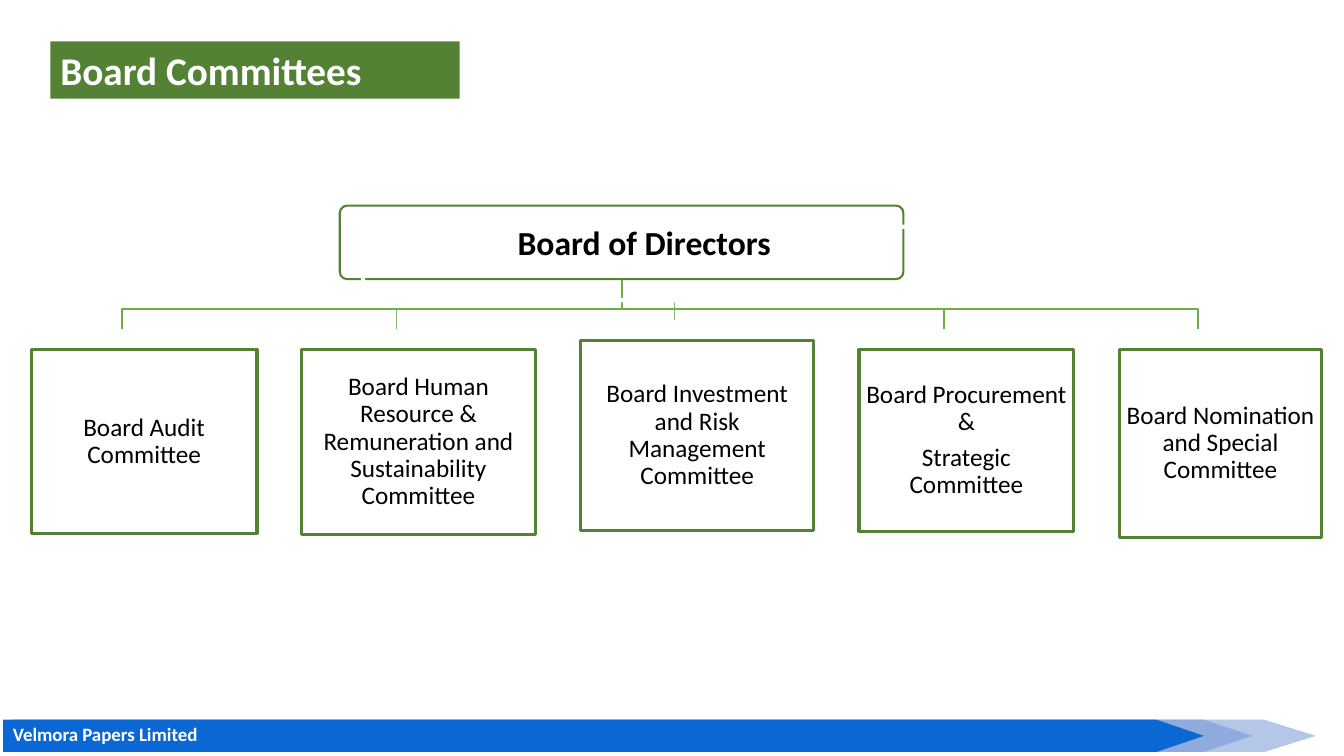
"""Build the board committees organisation chart slide."""
from dataclasses import dataclass

from pptx import Presentation
from pptx.dml.color import RGBColor
from pptx.enum.shapes import MSO_SHAPE
from pptx.enum.text import MSO_ANCHOR, MSO_AUTO_SIZE, PP_ALIGN
from pptx.util import Pt

EMU_PER_PX = 9144
TITLE_ONLY = 5
RECTANGLE = MSO_SHAPE.RECTANGLE
ROUNDED = MSO_SHAPE.ROUNDED_RECTANGLE
TOP, MIDDLE = MSO_ANCHOR.TOP, MSO_ANCHOR.MIDDLE
LEFT, CENTER = PP_ALIGN.LEFT, PP_ALIGN.CENTER
NO_AUTOFIT = MSO_AUTO_SIZE.NONE


@dataclass(frozen=True)
class Theme:
    font: str = "Calibri"
    white: str = "FFFFFF"
    black: str = "000000"
    green: str = "548235"
    branch: str = "70AD47"
    pale_branch: str = "88B76F"
    blue: str = "0A67D4"
    mid_blue: str = "8FAADC"
    pale_blue: str = "B4C7E7"
    title_size: float = 28
    board_size: float = 24
    committee_size: float = 18
    footer_size: float = 13.5


def px(length):
    return round(length * EMU_PER_PX)


class SlideBuilder:
    def __init__(self, slide, theme):
        self.slide = slide
        self.theme = theme

    def paint(self, shape, fill=None, line=None, width=1):
        shape.shadow.inherit = False
        if fill:
            shape.fill.solid()
            shape.fill.fore_color.rgb = RGBColor.from_string(fill)
        else:
            shape.fill.background()
        if line:
            shape.line.color.rgb = RGBColor.from_string(line)
            shape.line.width = Pt(width)
        else:
            shape.line.fill.background()

    def set_text(self, shape, lines, size, color, bold=False, align=CENTER,
                 anchor=MIDDLE, inset=(10, 5), spacing=0.9, after=0):
        frame = shape.text_frame
        frame.word_wrap = True
        frame.auto_size = NO_AUTOFIT
        frame.vertical_anchor = anchor
        frame.margin_left = frame.margin_right = px(inset[0])
        frame.margin_top = frame.margin_bottom = px(inset[1])
        for index, line in enumerate(lines):
            paragraph = frame.add_paragraph() if index else frame.paragraphs[0]
            paragraph.alignment = align
            paragraph.line_spacing = spacing
            paragraph.space_before = Pt(0)
            paragraph.space_after = Pt(after)
            run = paragraph.add_run()
            run.text = line
            run.font.name = self.theme.font
            run.font.size = Pt(size)
            run.font.bold = bold
            run.font.color.rgb = RGBColor.from_string(color)

    def title(self, text, box):
        shape = self.slide.shapes.title
        shape.left, shape.top, shape.width, shape.height = map(px, box)
        shape.fill.solid()
        shape.fill.fore_color.rgb = RGBColor.from_string(self.theme.green)
        self.set_text(shape, [text], self.theme.title_size, self.theme.white,
                      bold=True, align=LEFT, anchor=TOP, spacing=1.0)

    def box(self, kind, box, line, width):
        shape = self.slide.shapes.add_shape(kind, *map(px, box))
        if kind == ROUNDED:
            shape.adjustments[0] = 0.1
        self.paint(shape, line=line, width=width)
        return shape

    def text(self, text, box, size, color, **style):
        shape = self.slide.shapes.add_textbox(*map(px, box))
        self.set_text(shape, [text], size, color, bold=True, **style)

    def outline(self, points, closed):
        start, *rest = points
        builder = self.slide.shapes.build_freeform(*start, scale=EMU_PER_PX)
        builder.add_line_segments(rest, close=closed)
        return builder.convert_to_shape()

    def footer_arrow(self, left, shoulder, tip, fill):
        top, middle, bottom = 714, 730, 746
        points = [(left, top), (shoulder, top), (tip, middle),
                  (shoulder, bottom), (left, bottom)]
        self.paint(self.outline(points, True), fill=fill)

    def branch(self, end, bend, bottom, color, width):
        trunk, top = 617, 276
        points = [(trunk, top), (trunk, bend), (end, bend), (end, bottom)]
        self.paint(self.outline(points, False), line=color, width=width)

    def committee(self, lines, box):
        shape = self.box(RECTANGLE, box, self.theme.green, 2.25)
        self.set_text(shape, lines, self.theme.committee_size,
                      self.theme.black, inset=(7, 7), after=6.3)


def main():
    theme = Theme()
    presentation = Presentation()
    presentation.slide_width, presentation.slide_height = px(1333), px(750)
    slide = presentation.slides.add_slide(presentation.slide_layouts[TITLE_ONLY])
    builder = SlideBuilder(slide, theme)

    for arrow in [(11, 1254, 1305, theme.pale_blue),
                  (15, 1194, 1242, theme.mid_blue),
                  (3, 1147, 1194, theme.blue)]:
        builder.footer_arrow(*arrow)
    builder.text("Velmora Papers Limited", (3, 712, 474, 33), theme.footer_size,
                 theme.white, align=LEFT, anchor=TOP, spacing=1.0)

    for branch in [(1188, 307, 326, theme.branch, 1.5),
                   (936, 307, 326, theme.branch, 1.5),
                   (669, 298, 317, theme.pale_branch, 1),
                   (393, 307, 326, theme.pale_branch, 1),
                   (121, 307, 326, theme.branch, 1.5)]:
        builder.branch(*branch)

    builder.box(ROUNDED, (337, 204, 559, 73), theme.green, 1.5)
    builder.box(ROUNDED, (360, 225, 559, 73), theme.white, 3)
    builder.text("Board of Directors", (362, 209, 554, 68),
                 theme.board_size, theme.black)

    committees = [
        (["Board Audit Committee"], (31, 347, 224, 182)),
        (["Board Human Resource & Remuneration and Sustainability Committee"],
         (299, 347, 232, 183)),
        (["Board Investment and Risk Management Committee"],
         (576, 338, 231, 188)),
        (["Board Procurement &", "Strategic Committee"], (852, 347, 213, 180)),
        (["Board Nomination and Special Committee"], (1110, 347, 201, 186)),
    ]
    for lines, box in committees:
        builder.committee(lines, box)

    builder.title("Board Committees", (50, 41, 406, 57))
    presentation.save("out.pptx")


if __name__ == "__main__":
    main()
